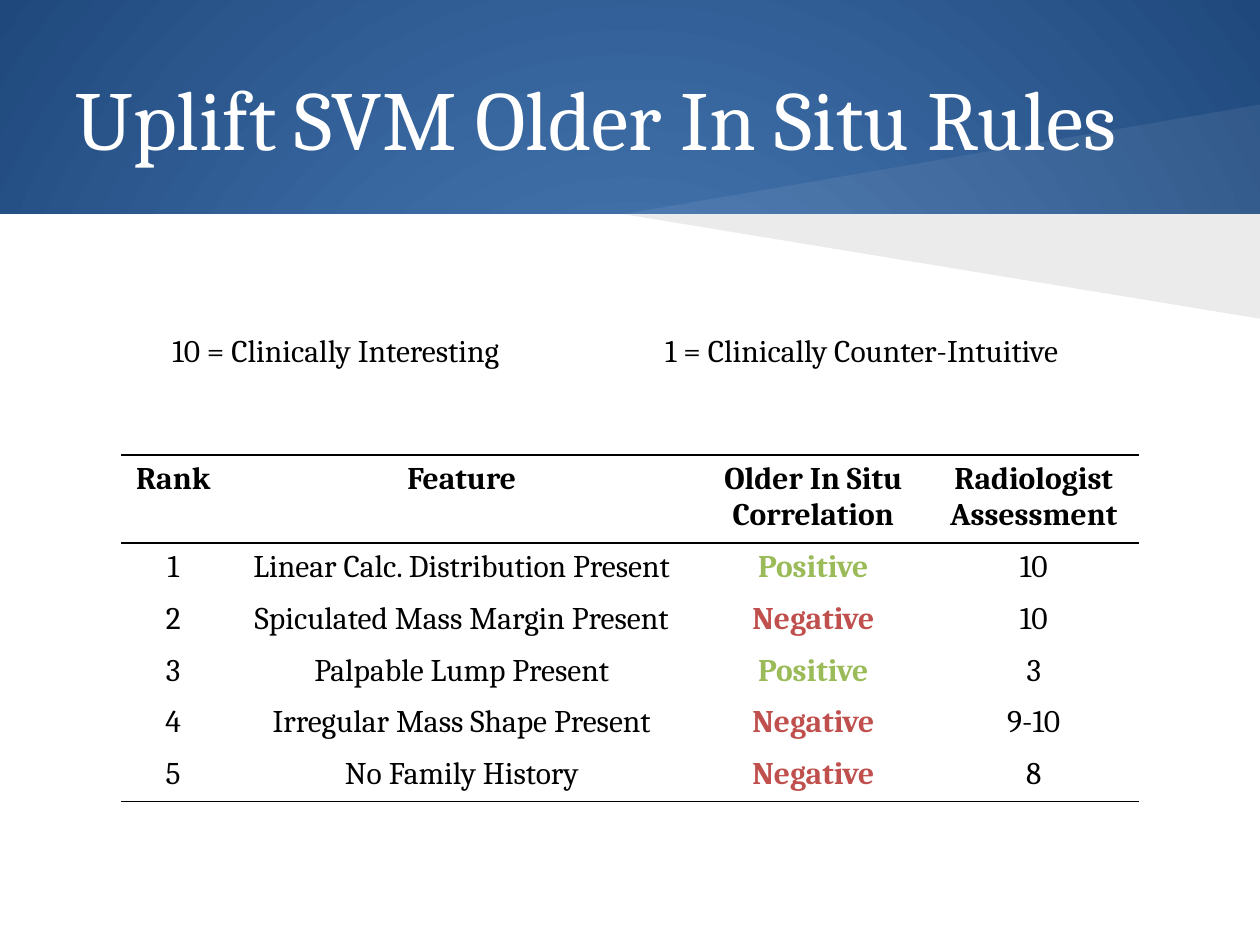
from lxml.etree import SubElement as Sub
from pptx import Presentation
from pptx.dml.color import RGBColor
from pptx.enum.shapes import MSO_SHAPE as Shape
from pptx.enum.text import MSO_ANCHOR as Anchor, MSO_AUTO_SIZE as Fit, PP_ALIGN as Align
from pptx.oxml.ns import qn
from pptx.util import Inches, Pt

FONT = "Cambria"
BLACK, WHITE = "000000", "FFFFFF"
TONES = {"Positive": "9BBB59", "Negative": "C0504D"}
WIDE, HIGH, BAND = 10, 7.5, 1.7

HEAD = ["Rank", "Feature", "Older In Situ Correlation", "Radiologist Assessment"]
RULES = [
    ("Linear Calc. Distribution Present", "Positive", "10"),
    ("Spiculated Mass Margin Present", "Negative", "10"),
    ("Palpable Lump Present", "Positive", "3"),
    ("Irregular Mass Shape Present", "Negative", "9-10"),
    ("No Family History", "Negative", "8"),
]


def color(code):
    return RGBColor.from_string(code)


def style(para, size, code, bold=False):
    font = para.font
    font.name, font.size, font.bold = FONT, Pt(size), bold
    font.color.rgb = color(code)


def paint(shape, code, alpha=None):
    shape.shadow.inherit = False
    shape.fill.solid()
    shape.fill.fore_color.rgb = color(code)
    shape.line.fill.background()
    if alpha:
        tint = shape.fill._xPr.find(".//" + qn("a:srgbClr"))
        Sub(tint, qn("a:alpha"), val=str(alpha * 1000))


def add_text(slide, box, text, size, code, wrap):
    frame = slide.shapes.add_textbox(*map(Inches, box)).text_frame
    frame.word_wrap = wrap
    frame.text = text
    style(frame.paragraphs[0], size, code)
    return frame


# Radial blue background
def add_back(slide):
    fill = slide.background.fill
    fill.gradient()
    for stop, code in zip(fill.gradient_stops, ("4F81BD", "1F497D")):
        stop.color.rgb = color(code)
    for stop, at in zip(fill.gradient_stops, (0, 1)):
        stop.position = at
    grad = slide._element.find(".//" + qn("a:gradFill"))
    grad.remove(grad.find(qn("a:lin")))
    ring = Sub(grad, qn("a:path"), {"path": "circle"})
    Sub(ring, qn("a:fillToRect"), {side: "50000" for side in "ltrb"})


# Translucent wedge opening from its tip to the right edge
def add_wedge(slide, tip, edge, code, alpha):
    x, y = tip
    pen = slide.shapes.build_freeform(Inches(x), Inches(y))
    pen.add_line_segments([(Inches(WIDE), Inches(edge)), (Inches(WIDE), Inches(y))])
    paint(pen.convert_to_shape(), code, alpha)


# White page below the band, with a wedge on either side of the border
def add_page(slide, box):
    page = slide.shapes.add_shape(Shape.RECTANGLE, *map(Inches, box))
    paint(page, WHITE)
    tip = (4.95, box[1])
    add_wedge(slide, tip, 0.83, WHITE, 7)
    add_wedge(slide, tip, 2.53, BLACK, 8)


# Title
def add_title(slide, box):
    frame = add_text(slide, box, "Uplift SVM Older In Situ Rules", 48, WHITE, True)
    frame.vertical_anchor = Anchor.MIDDLE
    frame.margin_top = frame.margin_bottom = Inches(0.1)


# Key to the scores
def add_key(slide, box, text):
    add_text(slide, box, text, 18, BLACK, False).auto_size = Fit.SHAPE_TO_FIT_TEXT


def set_edges(cell, shown):
    props = cell._tc.get_or_add_tcPr()
    for side in "LRTB":
        line = Sub(props, qn("a:ln" + side), w=str(Pt(1)))
        if side in shown:
            Sub(Sub(line, qn("a:solidFill")), qn("a:srgbClr"), val=BLACK)
        else:
            Sub(line, qn("a:noFill"))


# Table of ranked rules, ruled above and below the head and at the foot
def add_rules(slide, box, widths, tall):
    rows = [HEAD] + [(str(rank), *rule) for rank, rule in enumerate(RULES, 1)]
    table = slide.shapes.add_table(len(rows), len(HEAD), *map(Inches, box)).table
    table.first_row = table.horz_banding = False
    for col, width in zip(table.columns, widths):
        col.width = Inches(width)
    edges = {0: "TB", 1: "T", len(rows) - 1: "B"}
    for r, row in enumerate(rows):
        table.rows[r].height = Inches(tall)
        for c, text in enumerate(row):
            cell = table.cell(r, c)
            set_edges(cell, edges.get(r, ""))
            cell.fill.background()
            cell.text = text
            para = cell.text_frame.paragraphs[0]
            para.alignment = Align.CENTER
            style(para, 18, TONES.get(text, BLACK), r == 0 or text in TONES)


def main():
    deck = Presentation()
    deck.slide_width, deck.slide_height = Inches(WIDE), Inches(HIGH)
    slide = deck.slides.add_slide(deck.slide_layouts[6])
    add_back(slide)
    add_page(slide, (0, BAND, WIDE, HIGH - BAND))
    add_title(slide, (0.5, 0.3, 9, 1.25))
    add_rules(slide, (0.96, 3.61, 8.08, 2.73), (0.83, 3.75, 1.83, 1.67), 0.41)
    add_key(slide, (1.27, 2.58, 3.01, 0.4), "10 = Clinically Interesting")
    add_key(slide, (5.18, 2.58, 3.55, 0.4), "1 = Clinically Counter-Intuitive")
    deck.save("out.pptx")


if __name__ == "__main__":
    main()
